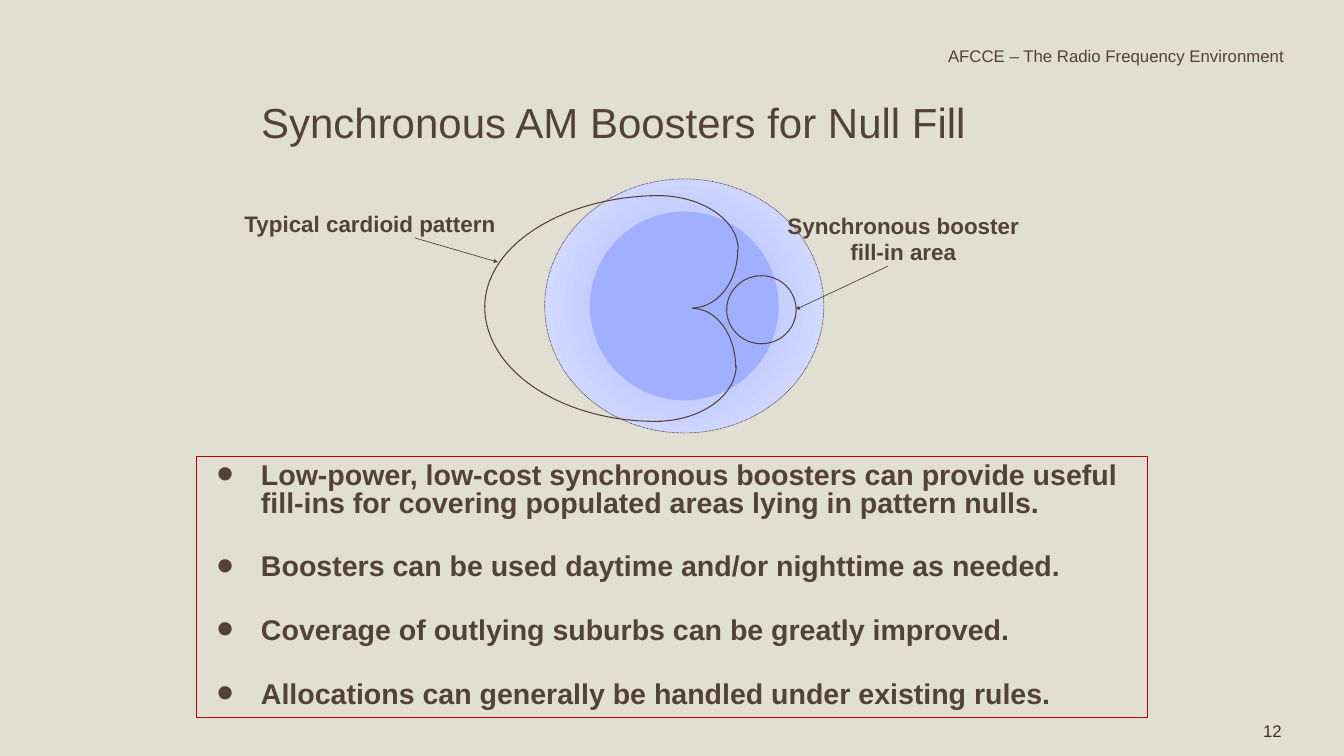
from pptx import Presentation
from pptx.dml.color import RGBColor
from pptx.enum.dml import MSO_LINE
from pptx.enum.shapes import MSO_CONNECTOR, MSO_SHAPE
from pptx.enum.text import MSO_ANCHOR, PP_ALIGN
from pptx.oxml import parse_xml
from pptx.oxml.ns import nsdecls
from pptx.util import Inches, Pt
from lxml.etree import SubElement
from pptx.oxml.ns import qn

THEME = {
    "font": "Arial", "back": "E1DFD1", "ink": "534239", "number": "3E322B", "frame": "C00000",
    "coverage": [(0, "A0AFFF"), (50, "A0AFFF"), (50, "C5CEFF"), (100, "E3E7FF")],
    "title": 60, "body": 40.8, "label": 32, "small": 24,
    "thin": 1, "outline": 1.5,
}
WIDTH, HEIGHT = 26.67, 15
TIGHT, LOOSE = (0.06, 0.06), (0.1, 0.05)

BULLETS = [
    "Low-power, low-cost synchronous boosters can provide useful fill-ins for covering populated areas lying in pattern nulls.",
    "Boosters can be used daytime and/or nighttime as needed.",
    "Coverage of outlying suburbs can be greatly improved.",
    "Allocations can generally be handled under existing rules.",
]
# Percent-of-slide boxes: left, top, width, height
COVERAGE = (40.53, 23.67, 20.77, 33.6)
BOOSTER = (54.07, 36.47, 5.17, 9)
BODY = (14.62, 60.4, 70.79, 34.47)
CARDIOID = [
    ((36.07, 25.87, 26.25, 29.47), 0, ["flipH"]),
    ((42.89, 25.87, 12.04, 14.33), 0, []),
    ((47.17, 27, 8.66, 12.07), 90, []),
    ((36.07, 25.47, 25.46, 30.27), 0, ["flipH", "flipV"]),
    ((42.74, 40.87, 12.04, 14.87), 0, ["flipV"]),
    ((47.13, 42.93, 8.81, 11.4), 270, ["flipV"]),
]
ARROWS = [(30.86, 31.47, 37.05, 34.67), (66.07, 35.2, 59.21, 40.93)]
TEXTS = [
    ("AFCCE – The Radio Frequency Environment", (70.15, 5.6, 25.76, 3.47), "small", "ink", False, False, TIGHT, MSO_ANCHOR.MIDDLE),
    ("Synchronous AM Boosters for Null Fill", (11.62, 10.2, 68.05, 11.67), "title", "ink", False, True, TIGHT, MSO_ANCHOR.MIDDLE),
    ("Typical cardioid pattern", (16.57, 27.4, 21.93, 4.27), "label", "ink", True, True, LOOSE, MSO_ANCHOR.TOP),
    ("Synchronous booster fill-in area", (58.12, 27.67, 18.19, 7.87), "label", "ink", True, True, LOOSE, MSO_ANCHOR.TOP),
    ("12", (93.33, 94.87, 2.7, 3.67), "small", "number", False, False, TIGHT, MSO_ANCHOR.TOP),
]


def color(name):
    return RGBColor.from_string(THEME[name])


def place(box):
    return [Inches(v * side / 100) for v, side in zip(box, (WIDTH, HEIGHT) * 2)]


def style_line(line, name, width):
    line.color.rgb = color(name)
    line.width = Pt(THEME[width])


def add_outline(s, kind, box, width="outline"):
    sp = s.shapes.add_shape(kind, *place(box))
    sp.shadow.inherit = False
    sp.fill.background()
    style_line(sp.line, "ink", width)
    return sp


def add_coverage(s):
    sp = add_outline(s, MSO_SHAPE.OVAL, COVERAGE, "thin")
    sp.line.dash_style = MSO_LINE.ROUND_DOT
    stops = "".join(f'<a:gs pos="{pos * 1000}"><a:srgbClr val="{rgb}"/></a:gs>'
                    for pos, rgb in THEME["coverage"])
    gradient = parse_xml(
        f'<a:gradFill {nsdecls("a")} rotWithShape="1"><a:gsLst>{stops}</a:gsLst><a:path path="circle">'
        '<a:fillToRect l="50000" t="50000" r="50000" b="50000"/></a:path></a:gradFill>')
    spPr = sp._element.spPr
    spPr.replace(spPr.find(qn("a:noFill")), gradient)


def add_arc(s, box, rotation, flips):
    sp = add_outline(s, MSO_SHAPE.ARC, box)
    sp.rotation = rotation
    for flip in flips:
        sp._element.spPr.xfrm.set(flip, "1")


def add_arrow(s, ends):
    cn = s.shapes.add_connector(MSO_CONNECTOR.STRAIGHT, *place(ends))
    style_line(cn.line, "ink", "thin")
    SubElement(cn.line._get_or_add_ln(), qn("a:tailEnd"), type="triangle")
    SubElement(cn._element.spPr, qn("a:effectLst"))


def style_font(font, size, ink, bold):
    font.name, font.size, font.bold = THEME["font"], Pt(THEME[size]), bold
    font.color.rgb = color(ink)


def add_text(s, text, box, size, ink, bold, wrap, insets, anchor):
    sp = s.shapes.add_textbox(*place(box))
    tf = sp.text_frame
    tf.word_wrap, tf.vertical_anchor = wrap, anchor
    tf.margin_left = tf.margin_right = Inches(insets[0])
    tf.margin_top = tf.margin_bottom = Inches(insets[1])
    tf.text = text
    for p in tf.paragraphs:
        p.alignment = PP_ALIGN.CENTER
        for r in p.runs:
            style_font(r.font, size, ink, bold)
    return sp


def add_body(s):
    sp = add_text(s, "\n".join(BULLETS), BODY, "body", "ink", True, True, TIGHT, MSO_ANCHOR.MIDDLE)
    style_line(sp.line, "frame", "outline")
    for i, p in enumerate(sp.text_frame.paragraphs):
        pPr = p._p.get_or_add_pPr()
        pPr.set("marL", str(Inches(1.22)))
        pPr.set("indent", str(Inches(-0.88)))
        SubElement(pPr, qn("a:buSzPct"), val="171000")
        SubElement(pPr, qn("a:buFont"), typeface=THEME["font"])
        SubElement(pPr, qn("a:buChar"), char="•")
        p.alignment = PP_ALIGN.LEFT
        p.line_spacing = 0.8
        p.space_before = Pt(52 if i else 0)


def main():
    prs = Presentation()
    prs.slide_width, prs.slide_height = Inches(WIDTH), Inches(HEIGHT)
    s = prs.slides.add_slide(prs.slide_layouts[6])
    s.background.fill.solid()
    s.background.fill.fore_color.rgb = color("back")
    add_coverage(s)
    add_body(s)
    for arc in CARDIOID:
        add_arc(s, *arc)
    add_outline(s, MSO_SHAPE.OVAL, BOOSTER)
    for ends in ARROWS:
        add_arrow(s, ends)
    for text in TEXTS:
        add_text(s, *text)
    prs.save("out.pptx")


if __name__ == "__main__":
    main()
